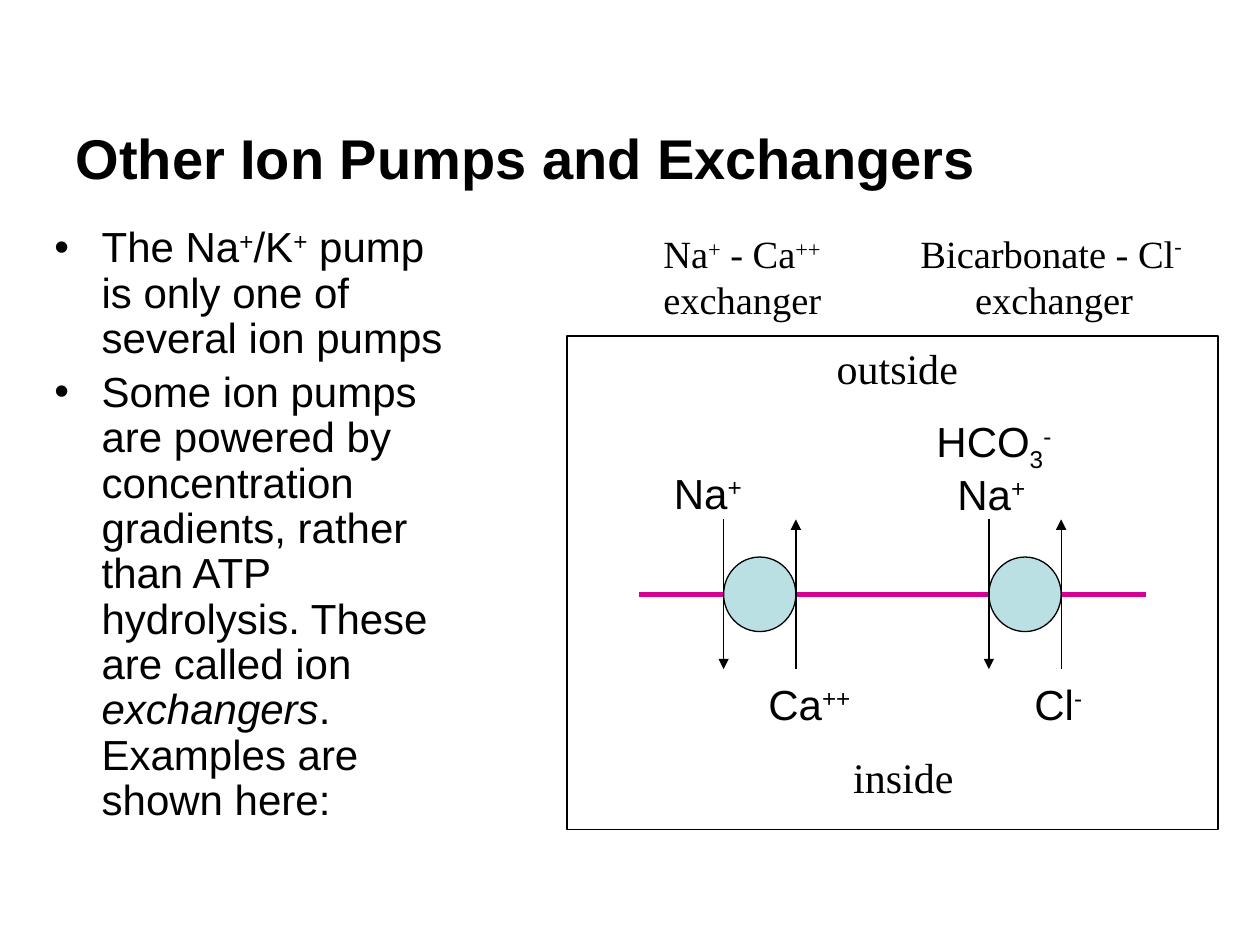
from pptx import Presentation
from pptx.dml.color import RGBColor
from pptx.enum import shapes, text
from pptx.oxml.ns import qn
from pptx.util import Pt

THEME = {
    "ink": RGBColor(0, 0, 0),
    "paper": RGBColor(255, 255, 255),
    "pump": RGBColor(0xBB, 0xE0, 0xE3),
    "membrane": RGBColor(0xD6, 0x00, 0x93),
    "sans": "Arial",
    "serif": "Times New Roman",
    "title": 32,
    "body": 24,
    "caption": 22,
}

# Content: a paragraph is a list of (words, style) runs
TITLE = "Other Ion Pumps and Exchangers"
BULLETS = [
    [("The Na", ""), ("+", "super"), ("/K", ""), ("+", "super"),
     (" pump is only one of several ion pumps", "")],
    [("Some ion pumps are powered by concentration gradients, rather than "
      "ATP hydrolysis. These are called ion ", ""),
     ("exchangers", "italic"), (". Examples are shown here:", "")],
]
SODIUM = [[("Na", ""), ("+", "super")]]
LEFT, CENTER = text.PP_ALIGN.LEFT, text.PP_ALIGN.CENTER
# left, top, width, height, paragraphs, font, size, alignment
LABELS = [
    (480.5, 426, 72, 36, [[("inside", "")]], "serif", "body", LEFT),
    (471, 192, 83.5, 36, [[("outside", "")]], "serif", "body", LEFT),
    (432, 384, 64, 36, [[("Ca", ""), ("++", "super")]], "sans", "body", LEFT),
    (378, 263.5, 54.7, 36, SODIUM, "sans", "body", LEFT),
    (540, 264, 54.7, 36, SODIUM, "sans", "body", LEFT),
    (528, 234, 82, 36, [[("HCO", ""), ("3", "sub"), ("-", "super")]],
     "sans", "body", LEFT),
    (584, 384, 42.5, 36, [[("Cl", ""), ("-", "super")]], "sans", "body", LEFT),
    (372, 128, 114, 60,
     [[("Na", ""), ("+", "super"), (" - Ca", ""), ("++", "super")],
      [("exchanger", "")]], "serif", "caption", LEFT),
    (517, 128, 170.6, 60,
     [[("Bicarbonate - Cl", ""), ("- ", "high")], [("exchanger", "")]],
     "serif", "caption", CENTER),
]
BASELINES = {"super": "30000", "high": "38000", "sub": "-25000"}

# Diagram geometry
PANEL = (324, 192, 372, 282)
PUMP_LEFTS = (413.5, 565.1)
PUMP_W, PUMP_H = 41.3, 42.6
MEMBRANE_Y, MEMBRANE_START, MEMBRANE_END = 339.6, 365.3, 654.7
ARROW_REACH = 42.8

prs = Presentation()
prs.slide_width, prs.slide_height = Pt(720), Pt(540)
slide = prs.slides.add_slide(prs.slide_layouts[5])


def style_run(run, font, size):
    run.font.name = THEME[font]
    run.font.size = Pt(THEME[size])
    run.font.color.rgb = THEME["ink"]


def fill_paragraphs(frame, paragraphs, font, size, align=LEFT):
    for i, runs in enumerate(paragraphs):
        para = frame.paragraphs[0] if i == 0 else frame.add_paragraph()
        para.alignment = align
        for words, style in runs:
            run = para.add_run()
            run.text = words
            style_run(run, font, size)
            if style == "italic":
                run.font.italic = True
            elif style:
                run.font._element.set("baseline", BASELINES[style])


def add_outlined(kind, box, fill):
    shape = slide.shapes.add_shape(kind, *map(Pt, box))
    shape.shadow.inherit = False
    shape.fill.solid()
    shape.fill.fore_color.rgb = THEME[fill]
    shape.line.color.rgb = THEME["ink"]
    shape.line.width = Pt(0.75)


def add_line(x1, y1, x2, y2, color, width, arrow=False):
    line = slide.shapes.add_connector(
        shapes.MSO_CONNECTOR.STRAIGHT, *map(Pt, (x1, y1, x2, y2)))
    line.line.color.rgb = THEME[color]
    line.line.width = Pt(width)
    if arrow:
        outline = line.line._get_or_add_ln()
        outline.append(outline.makeelement(qn("a:tailEnd"), {"type": "triangle"}))
    props = line._element.spPr
    props.append(props.makeelement(qn("a:effectLst"), {}))


# Title
title = slide.shapes.title
title.left, title.top, title.width, title.height = map(Pt, (36, 60, 612, 60))
title.text_frame.text = TITLE
title.text_frame.vertical_anchor = text.MSO_ANCHOR.MIDDLE
heading = title.text_frame.paragraphs[0]
heading.alignment = LEFT
style_run(heading.runs[0], "sans", "title")
heading.runs[0].font.bold = True

# Bulleted text
body = slide.shapes.add_textbox(*map(Pt, (24, 126, 246, 360))).text_frame
body.word_wrap = True
fill_paragraphs(body, BULLETS, "sans", "body")
for para in body.paragraphs:
    para.line_spacing = 0.9
    para.space_before = Pt(4.8)
    props = para._p.get_or_add_pPr()
    props.set("marL", str(Pt(27)))
    props.set("indent", str(-Pt(27)))
    props.append(props.makeelement(qn("a:buFont"), {"typeface": THEME["sans"]}))
    props.append(props.makeelement(qn("a:buChar"), {"char": "•"}))

# Panel and pumps
add_outlined(shapes.MSO_SHAPE.RECTANGLE, PANEL, "paper")
for left in PUMP_LEFTS:
    add_outlined(shapes.MSO_SHAPE.OVAL,
                 (left, MEMBRANE_Y - PUMP_H / 2, PUMP_W, PUMP_H), "pump")

# Membrane pieces fill the gaps between pumps
starts = [MEMBRANE_START] + [left + PUMP_W for left in PUMP_LEFTS]
for start, end in zip(starts, [*PUMP_LEFTS, MEMBRANE_END]):
    add_line(start, MEMBRANE_Y, end, MEMBRANE_Y, "membrane", 3)

# Ion flow: inward on each pump's left, outward on its right
outside_y, inside_y = MEMBRANE_Y - ARROW_REACH, MEMBRANE_Y + ARROW_REACH
for left in PUMP_LEFTS:
    right = left + PUMP_W
    add_line(left, outside_y, left, inside_y, "ink", 0.75, arrow=True)
    add_line(right, inside_y, right, outside_y, "ink", 0.75, arrow=True)

# Labels
for *box, paragraphs, font, size, align in LABELS:
    label = slide.shapes.add_textbox(*map(Pt, box)).text_frame
    label.word_wrap = False
    label.auto_size = text.MSO_AUTO_SIZE.SHAPE_TO_FIT_TEXT
    fill_paragraphs(label, paragraphs, font, size, align)

prs.save("out.pptx")
